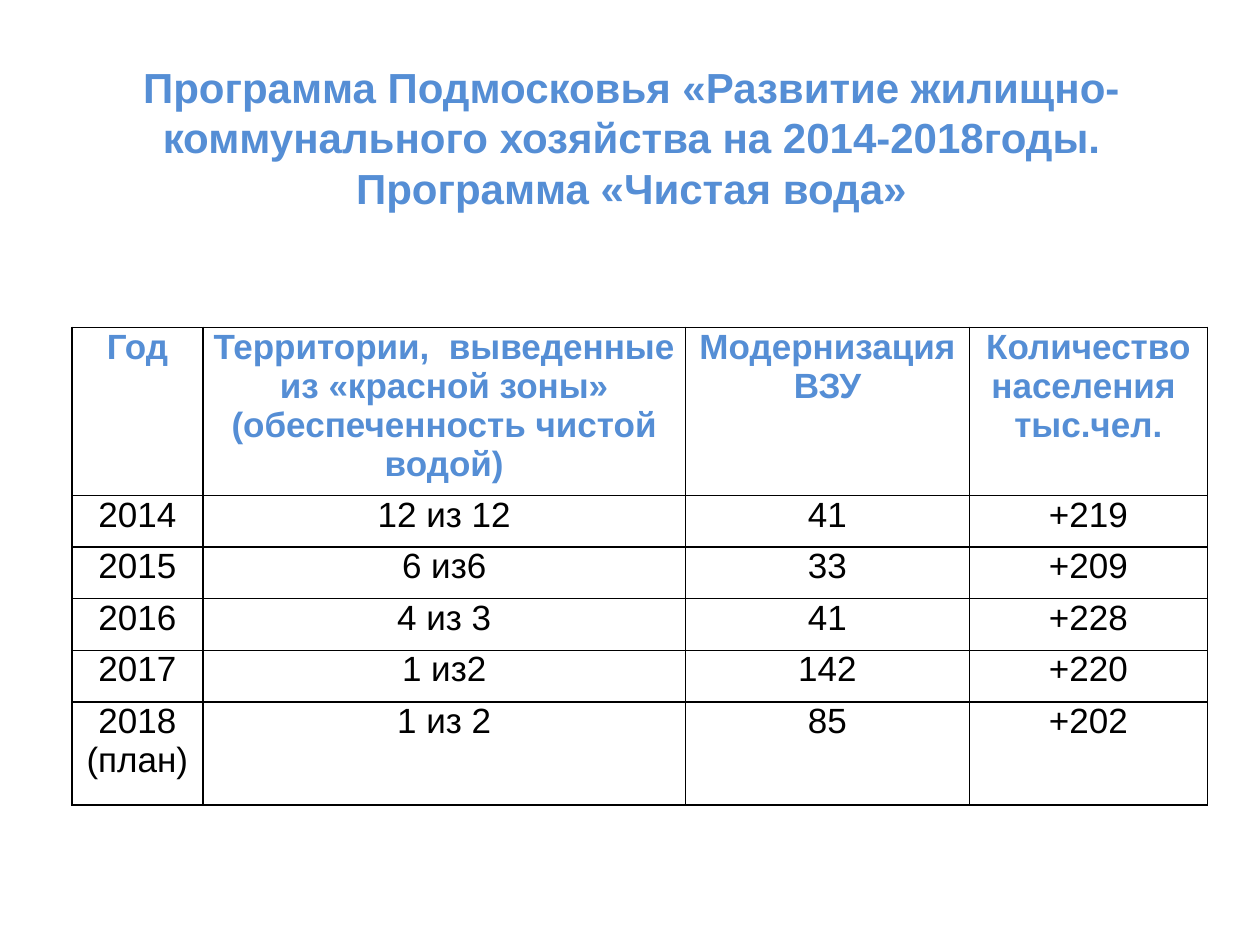
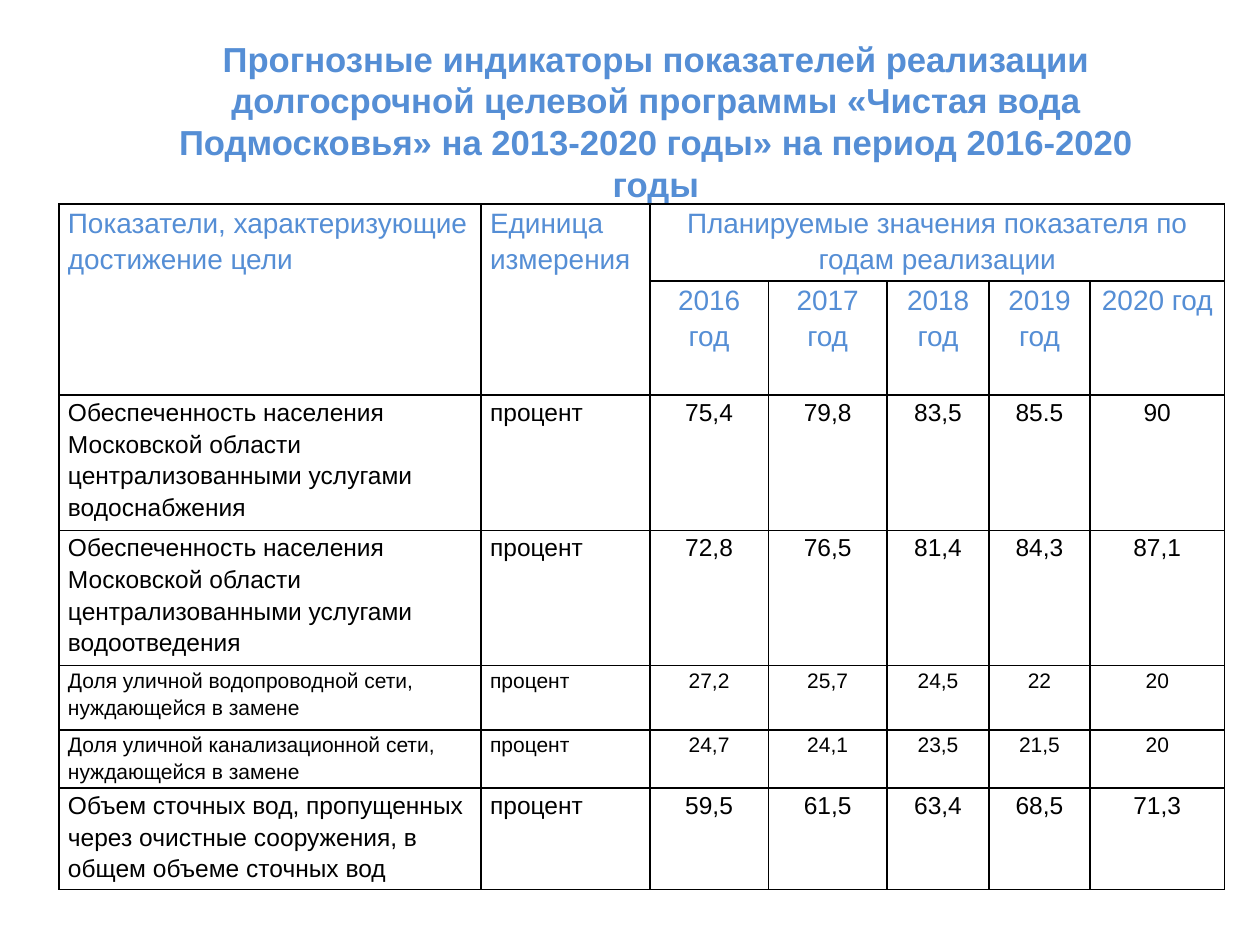
"""Build two slides on the clean water programme, each with a title and a table."""
from lxml.etree import SubElement
from pptx import Presentation
from pptx.dml.color import RGBColor
from pptx.enum.text import MSO_ANCHOR, PP_ALIGN
from pptx.oxml.ns import qn
from pptx.util import Cm, Pt

BLUE = RGBColor(0x55, 0x8E, 0xD5)
BLACK = RGBColor(0, 0, 0)
FONT = "Arial"


def style(para, size, color, bold=False, align=PP_ALIGN.CENTER):
    font = para.font
    font.name, font.size, font.bold = FONT, Pt(size), bold
    font.color.rgb = color
    para.alignment = align


def border(cell):
    props = cell._tc.get_or_add_tcPr()
    for side in ("lnL", "lnR", "lnT", "lnB"):
        line = SubElement(props, qn(f"a:{side}"), w=str(Pt(1)))
        fill = SubElement(line, qn("a:solidFill"))
        SubElement(fill, qn("a:srgbClr"), val=str(BLACK))


goals = [
    ["Год", "Территории,  выведенные из «красной зоны» (обеспеченность чистой водой)",
     "Модернизация ВЗУ", "Количество населения  тыс.чел."],
    ["2014", "12 из 12", "41", "+219"],
    ["2015", "6 из6", "33", "+209"],
    ["2016", "4 из 3", "41", "+228"],
    ["2017", "1 из2", "142", "+220"],
    ["2018\n(план)", "1 из 2", "85", "+202"],
]
unit = "процент"
plan = [
    ["Показатели, характеризующие достижение цели", "Единица измерения",
     "Планируемые значения показателя по годам реализации", "", "", "", ""],
    ["", ""] + [f"{year} год" for year in range(2016, 2021)],
    ["Обеспеченность населения Московской области централизованными услугами водоснабжения",
     unit, "75,4", "79,8", "83,5", "85.5", "90"],
    ["Обеспеченность населения Московской области централизованными услугами водоотведения",
     unit, "72,8", "76,5", "81,4", "84,3", "87,1"],
    ["Доля уличной водопроводной сети, нуждающейся в замене",
     unit, "27,2", "25,7", "24,5", "22", "20"],
    ["Доля уличной канализационной сети, нуждающейся в замене",
     unit, "24,7", "24,1", "23,5", "21,5", "20"],
    ["Объем сточных вод, пропущенных через очистные сооружения, в общем объеме сточных вод",
     unit, "59,5", "61,5", "63,4", "68,5", "71,3"],
]

pages = [
    dict(title="Программа Подмосковья «Развитие жилищно-коммунального хозяйства "
               "на 2014-2018годы.\vПрограмма «Чистая вода»",
         box=(1.3, 0.76, 22.86, 4), size=24, start=(1.45, 6.6), rows=goals,
         wide=[2.64, 9.73, 5.72, 4.8], high=[3.12] + [1.04] * 4 + [2.08],
         sizes=[20] * 6, heads=1, bold=True, left=0, lead=1, after=0, spans=[]),
    dict(title="Прогнозные индикаторы показателей реализации долгосрочной целевой "
               "программы «Чистая вода Подмосковья» на 2013-2020 годы» "
               "на период 2016-2020 годы",
         box=(2.49, 0.76, 21.46, 3.35), size=19.8, start=(1.19, 4.11), rows=plan,
         wide=[8.51, 3.4, 2.39, 2.39, 2.06, 2.03, 2.72],
         high=[1.44, 2.3, 2.56, 2.56, 1.3, 1.09, 1.9],
         sizes=[16, 16, 14, 14, 12, 12, 14], heads=2, bold=False, left=2,
         lead=1.15, after=10,
         spans=[((0, 0), (1, 0)), ((0, 1), (1, 1)), ((0, 2), (0, 6))]),
]

deck = Presentation()
deck.slide_width, deck.slide_height = Cm(25.4), Cm(19.05)

for page in pages:
    slide = deck.slides.add_slide(deck.slide_layouts[6])
    frame = slide.shapes.add_textbox(*map(Cm, page["box"])).text_frame
    frame.word_wrap = True
    frame.vertical_anchor = MSO_ANCHOR.MIDDLE
    frame.text = page["title"]
    style(frame.paragraphs[0], page["size"], BLUE, bold=True)

    rows, wide, high = page["rows"], page["wide"], page["high"]
    grid = slide.shapes.add_table(len(rows), len(wide), *map(Cm, page["start"]),
                                  Cm(sum(wide)), Cm(sum(high))).table
    grid.first_row = grid.horz_banding = False
    for col, width in zip(grid.columns, wide):
        col.width = Cm(width)
    for row, height in zip(grid.rows, high):
        row.height = Cm(height)
    for first, last in page["spans"]:
        grid.cell(*first).merge(grid.cell(*last))

    for r, row in enumerate(rows):
        head = r < page["heads"]
        for c, text in enumerate(row):
            cell = grid.cell(r, c)
            border(cell)
            cell.fill.background()
            cell.margin_left = cell.margin_right = Cm(0.18)
            cell.margin_top = cell.margin_bottom = 0
            if not text:
                continue
            cell.text = text
            align = PP_ALIGN.LEFT if c < page["left"] else PP_ALIGN.CENTER
            for para in cell.text_frame.paragraphs:
                style(para, page["sizes"][r], BLUE if head else BLACK,
                      head and page["bold"], align)
                para.line_spacing = page["lead"]
                para.space_after = Pt(page["after"] if r else 0)

deck.save("out.pptx")
